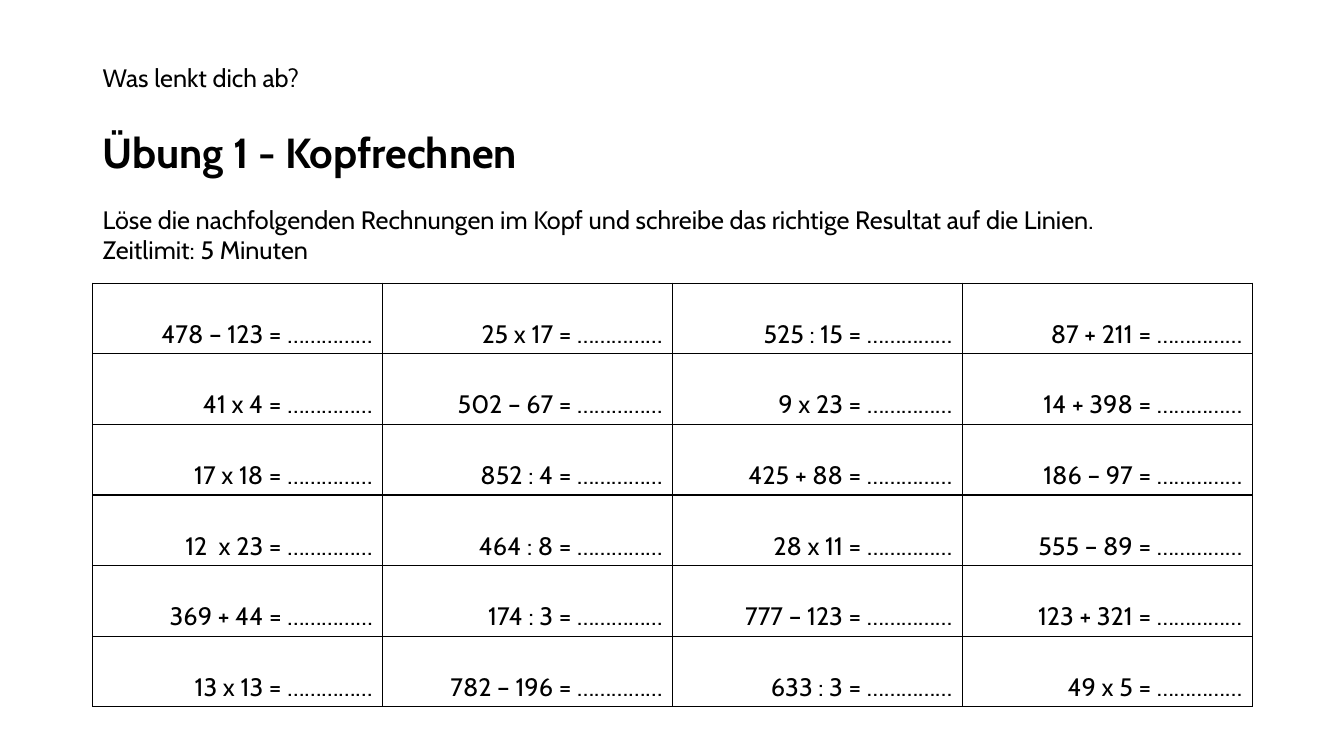
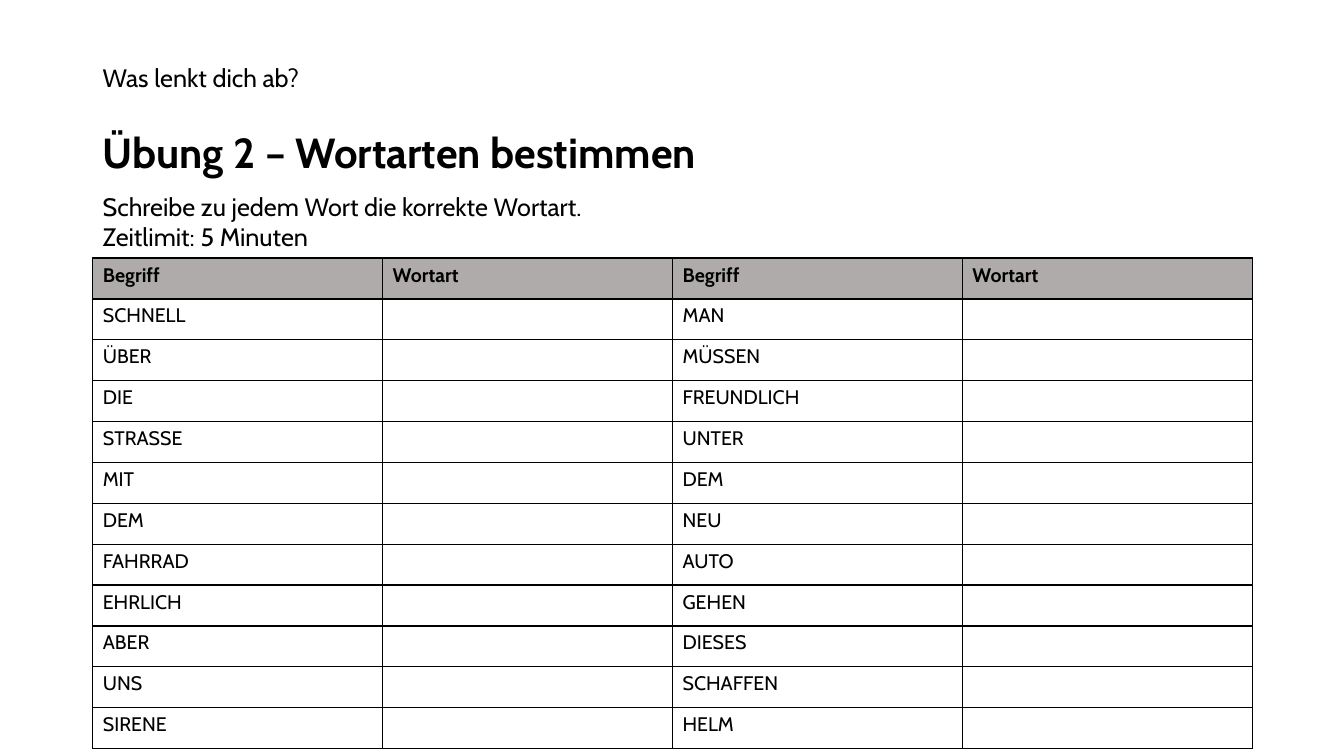
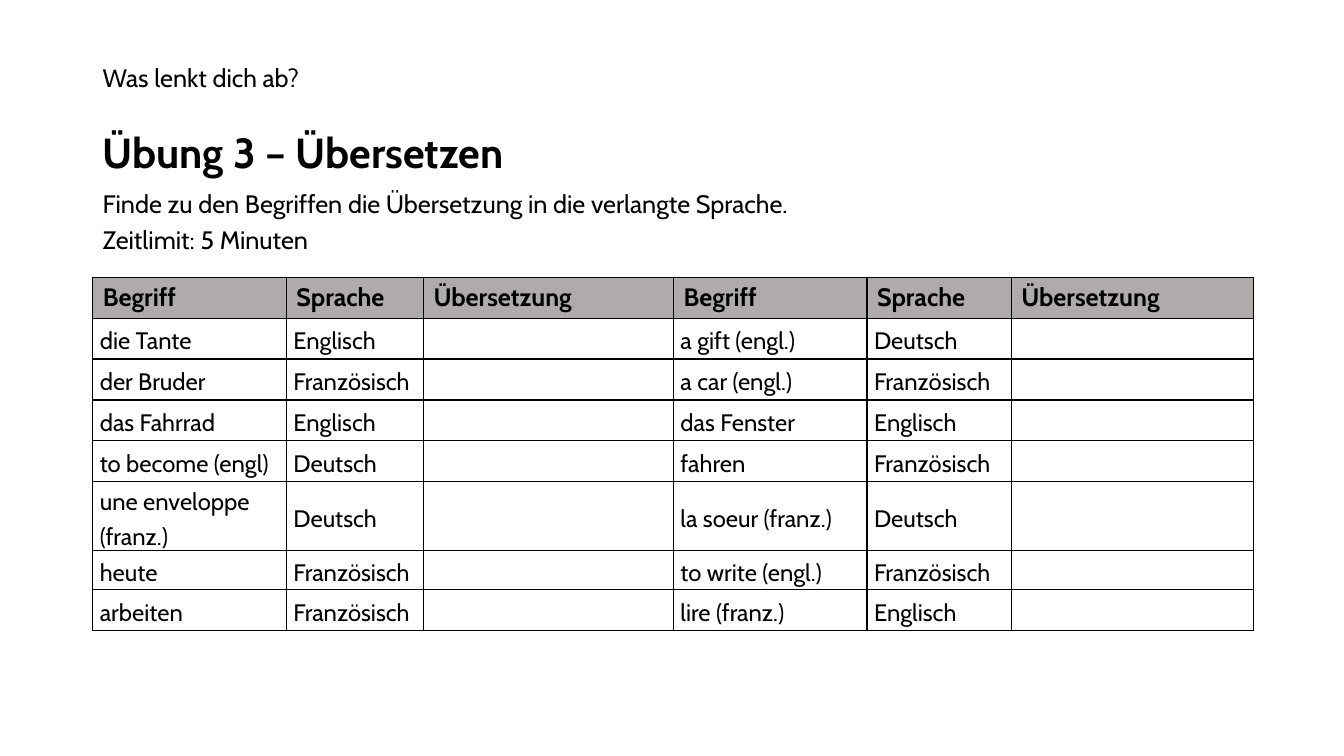
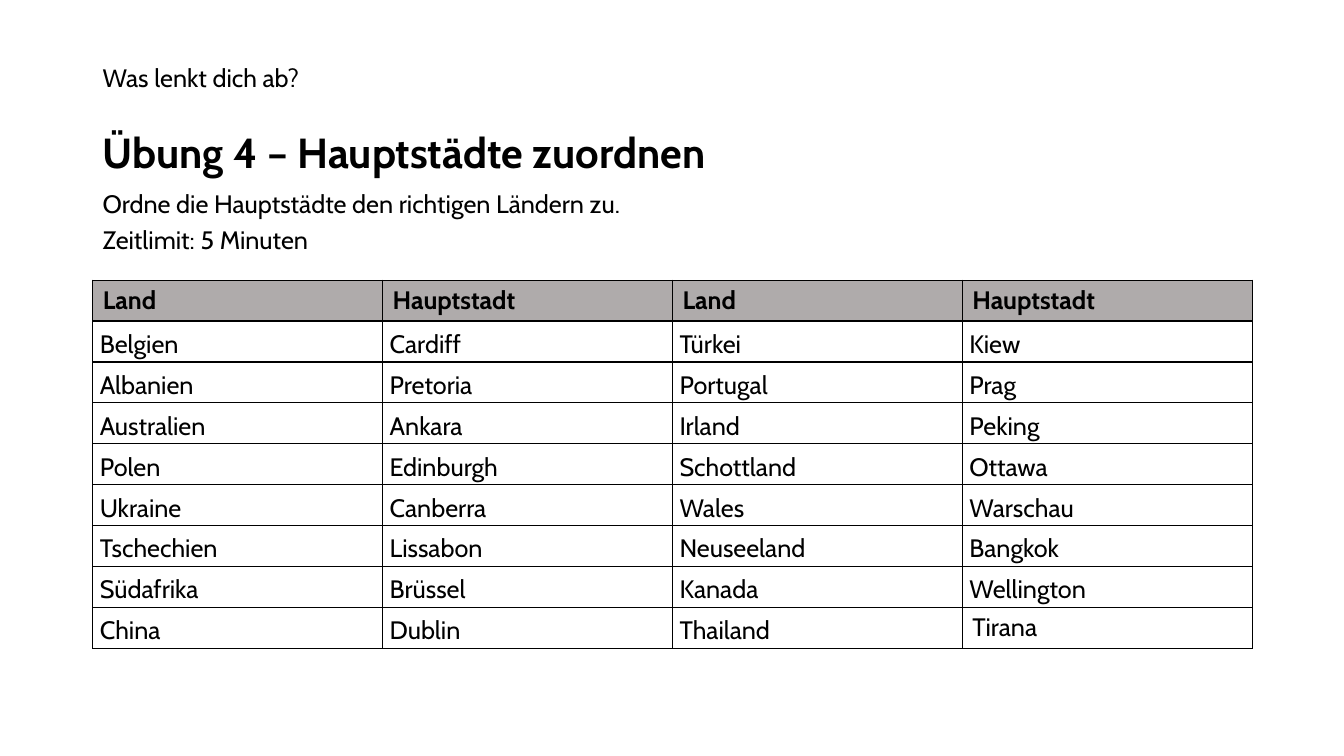
from lxml.etree import SubElement
from pptx import Presentation
from pptx.dml.color import RGBColor
from pptx.enum.text import MSO_ANCHOR, PP_ALIGN
from pptx.oxml.ns import qn
from pptx.util import Inches, Pt

BLACK = RGBColor(0x00, 0x00, 0x00)
WHITE = RGBColor(0xFF, 0xFF, 0xFF)
GREY = RGBColor(0xAF, 0xAB, 0xAB)
FONT = "Cabin"
LEFT = Inches(0.92)
WIDTH = Inches(11.5)
TIME_LIMIT = "Zeitlimit: 5 Minuten"
BLANK = " = ……………"

SUMS = [
    ["478 – 123", "25 x 17", "525 : 15", "87 + 211"],
    ["41 x 4", "502 – 67", "9 x 23", "14 + 398"],
    ["17 x 18", "852 : 4", "425 + 88", "186 – 97"],
    ["12  x 23", "464 : 8", "28 x 11", "555 – 89"],
    ["369 + 44", "174 : 3", "777 – 123", "123 + 321"],
    ["13 x 13", "782 – 196", "633 : 3", "49 x 5"],
]
WORDS = [
    ("SCHNELL", "MAN"), ("ÜBER", "MÜSSEN"), ("DIE", "FREUNDLICH"),
    ("STRASSE", "UNTER"), ("MIT", "DEM"), ("DEM", "NEU"),
    ("FAHRRAD", "AUTO"), ("EHRLICH", "GEHEN"), ("ABER", "DIESES"),
    ("UNS", "SCHAFFEN"), ("SIRENE", "HELM"),
]
TRANSLATIONS = [
    ["die Tante", "Englisch", "", "a gift (engl.)", "Deutsch", ""],
    ["der Bruder", "Französisch", "", "a car (engl.)", "Französisch", ""],
    ["das Fahrrad", "Englisch", "", "das Fenster", "Englisch", ""],
    ["to become (engl)", "Deutsch", "", "fahren", "Französisch", ""],
    ["une enveloppe (franz.)", "Deutsch", "", "la soeur (franz.)", "Deutsch", ""],
    ["heute", "Französisch", "", "to write (engl.)", "Französisch", ""],
    ["arbeiten", "Französisch", "", "lire (franz.)", "Englisch", ""],
]
CAPITALS = [
    ["Belgien", "Cardiff", "Türkei", "Kiew"],
    ["Albanien", "Pretoria", "Portugal", "Prag"],
    ["Australien", "Ankara", "Irland", "Peking"],
    ["Polen", "Edinburgh", "Schottland", "Ottawa"],
    ["Ukraine", "Canberra", "Wales", "Warschau"],
    ["Tschechien", "Lissabon", "Neuseeland", "Bangkok"],
    ["Südafrika", "Brüssel", "Kanada", "Wellington"],
    ["China", "Dublin", "Thailand", "Tirana"],
]

EXERCISES = [
    dict(title="Übung 1 - Kopfrechnen",
         task="Löse die nachfolgenden Rechnungen im Kopf und schreibe das richtige Resultat auf die Linien.",
         task_top=1.98, task_height=0.71, task_spacing=1.0,
         table_top=2.81, table_height=4.2, header=[],
         rows=[[entry + BLANK for entry in row] for row in SUMS],
         size=18, spacing=2.0, align=PP_ALIGN.RIGHT, compact=False),
    dict(title="Übung 2 – Wortarten bestimmen",
         task="Schreibe zu jedem Wort die korrekte Wortart.",
         task_top=1.85, task_height=0.71, task_spacing=1.0,
         table_top=2.56, table_height=4.87, header=["Begriff", "Wortart"] * 2,
         header_size=14, rows=[[first, "", second, ""] for first, second in WORDS],
         size=14, spacing=1.0, align=PP_ALIGN.LEFT, compact=False),
    dict(title="Übung 3 – Übersetzen",
         task="Finde zu den Begriffen die Übersetzung in die verlangte Sprache.",
         task_top=1.76, task_height=0.8, task_spacing=1.2,
         table_top=2.75, table_height=3.25, header=["Begriff", "Sprache", "Übersetzung"] * 2,
         header_size=18, rows=TRANSLATIONS,
         column_widths=[1.92, 1.36, 2.48, 1.92, 1.43, 2.4], row_heights={5: 0.68, 6: 0.39},
         size=17, spacing=1.2, align=PP_ALIGN.LEFT, compact=True),
    dict(title="Übung 4 – Hauptstädte zuordnen",
         task="Ordne die Hauptstädte den richtigen Ländern zu.",
         task_top=1.76, task_height=0.8, task_spacing=1.2,
         table_top=2.78, table_height=3.65, header=["Land", "Hauptstadt"] * 2,
         header_size=18, rows=CAPITALS,
         size=18, spacing=1.2, align=PP_ALIGN.LEFT, compact=True),
]


def write(para, text, size, bold=False, spacing=1.0, align=PP_ALIGN.LEFT):
    para.alignment = align
    para.line_spacing = spacing
    if text:
        span = para.add_run()
        span.text = text
        font = span.font
    else:
        font = para.font
    font.name = FONT
    font.size = Pt(size)
    font.bold = bold
    font.color.rgb = BLACK


def style_cell(cell, fill):
    properties = cell._tc.get_or_add_tcPr()
    for side in ("a:lnL", "a:lnR", "a:lnT", "a:lnB"):
        line = SubElement(properties, qn(side), w=str(Pt(1)))
        SubElement(SubElement(line, qn("a:solidFill")), qn("a:srgbClr"), val=str(BLACK))
    cell.fill.solid()
    cell.fill.fore_color.rgb = fill


deck = Presentation()
deck.slide_width = Inches(13.33)
deck.slide_height = Inches(7.5)
layout = deck.slide_layouts[5]
pages = [deck.slides.add_slide(layout) for exercise in EXERCISES]

topic = pages[0].shapes.add_textbox(LEFT, Inches(0.57), Inches(7.13), Inches(0.4))
topic.text_frame.word_wrap = True
write(topic.text_frame.paragraphs[0], "Was lenkt dich ab?", 18)
layout.placeholders[0].element.getparent().append(topic.element)

for page, exercise in zip(pages, EXERCISES):
    title = page.shapes.title
    title.left, title.top, title.width, title.height = LEFT, Inches(1.23), WIDTH, Inches(0.62)
    title.text_frame.vertical_anchor = MSO_ANCHOR.MIDDLE
    write(title.text_frame.paragraphs[0], exercise["title"], 30, True, 0.9)

    box = page.shapes.add_textbox(LEFT, Inches(exercise["task_top"]), WIDTH, Inches(exercise["task_height"]))
    box.text_frame.word_wrap = True
    write(box.text_frame.paragraphs[0], exercise["task"], 18, spacing=exercise["task_spacing"])
    write(box.text_frame.add_paragraph(), TIME_LIMIT, 18, spacing=exercise["task_spacing"])

    header = exercise["header"]
    rows = ([header] if header else []) + exercise["rows"]
    table = page.shapes.add_table(len(rows), len(rows[0]), LEFT, Inches(exercise["table_top"]),
                                  WIDTH, Inches(exercise["table_height"])).table
    table.first_row = bool(header)
    table.horz_banding = False
    for index, width in enumerate(exercise.get("column_widths", [])):
        table.columns[index].width = Inches(width)
    for index, height in exercise.get("row_heights", {}).items():
        table.rows[index].height = Inches(height)

    for row_index, row in enumerate(rows):
        for column_index, text in enumerate(row):
            cell = table.cell(row_index, column_index)
            para = cell.text_frame.paragraphs[0]
            if header and row_index == 0:
                style_cell(cell, GREY)
                write(para, text, exercise["header_size"], True)
                continue
            style_cell(cell, WHITE)
            if text == "Tirana":
                write(para, text, exercise["size"])
                continue
            write(para, text, exercise["size"], False, exercise["spacing"], exercise["align"])
            if exercise["compact"]:
                cell.vertical_anchor = MSO_ANCHOR.MIDDLE
                cell.margin_left = cell.margin_right = Inches(0.07)
                cell.margin_top = cell.margin_bottom = 0

deck.save("out.pptx")
